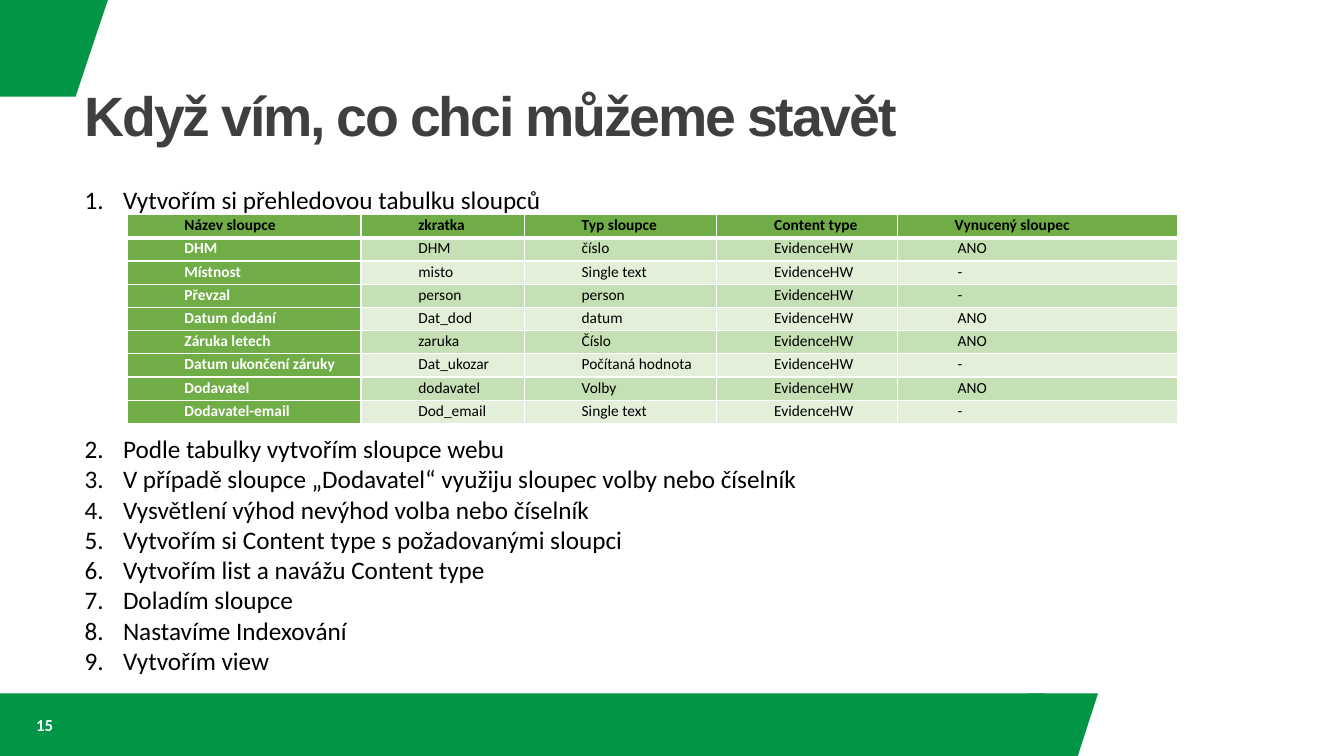
from pptx import Presentation
from pptx.dml.color import RGBColor
from pptx.enum.shapes import MSO_SHAPE
from pptx.enum.text import MSO_ANCHOR, MSO_AUTO_SIZE, PP_ALIGN
from pptx.oxml.xmlchemy import OxmlElement
from pptx.util import Inches, Pt

GREEN, WHITE, BLACK = "009645", "FFFFFF", "000000"
HEAD, BANDS = "70AD47", ("C5E0B4", "E2F0D9")
COLS = (2.32, 1.62, 1.91, 1.79, 2.78)
ROW = 0.23
ROWS = (
    ("Název sloupce", "zkratka", "Typ sloupce", "Content type", "Vynucený sloupec"),
    ("DHM", "DHM", "číslo", "EvidenceHW", "ANO"),
    ("Místnost", "misto", "Single text", "EvidenceHW", "-"),
    ("Převzal", "person", "person", "EvidenceHW", "-"),
    ("Datum dodání", "Dat_dod", "datum", "EvidenceHW", "ANO"),
    ("Záruka letech", "zaruka", "Číslo", "EvidenceHW", "ANO"),
    ("Datum ukončení záruky", "Dat_ukozar", "Počítaná hodnota", "EvidenceHW", "-"),
    ("Dodavatel", "dodavatel", "Volby", "EvidenceHW", "ANO"),
    ("Dodavatel-email", "Dod_email", "Single text", "EvidenceHW", "-"),
)
STEPS = (
    "Vytvořím si přehledovou tabulku sloupců",
    "Podle tabulky vytvořím sloupce webu",
    "V případě sloupce „Dodavatel“ využiju sloupec volby nebo číselník",
    "Vysvětlení výhod nevýhod volba nebo číselník",
    "Vytvořím si Content type s požadovanými sloupci",
    "Vytvořím list a navážu Content type",
    "Doladím sloupce",
    "Nastavíme Indexování",
    "Vytvořím view",
)


def color(code):
    return RGBColor.from_string(code)


def apply(item, values):
    for name, value in values.items():
        setattr(item, name, value)


def place(shape, left, top, width, height):
    apply(shape, {"left": Inches(left), "top": Inches(top),
                  "width": Inches(width), "height": Inches(height)})


def write(para, text, size, code, bold=False, face="Calibri"):
    run = para.add_run()
    run.text = text
    apply(run.font, {"size": Pt(size), "bold": bold, "name": face})
    run.font.color.rgb = color(code)
    return run


def paint(shape, code):
    shape.shadow.inherit = False
    shape.fill.solid()
    shape.fill.fore_color.rgb = color(code)
    shape.line.fill.background()


def add_slant(slide, points):
    first, *rest = [(Inches(x), Inches(y)) for x, y in points]
    form = slide.shapes.build_freeform(*first)
    form.add_line_segments(rest, close=True)
    paint(form.convert_to_shape(), GREEN)


def add_bar(slide, *box):
    paint(slide.shapes.add_shape(MSO_SHAPE.RECTANGLE, *map(Inches, box)), GREEN)


def add_number(slide, text, *box):
    frame = slide.shapes.add_textbox(*map(Inches, box)).text_frame
    apply(frame, {"word_wrap": True, "vertical_anchor": MSO_ANCHOR.MIDDLE})
    write(frame.paragraphs[0], text, 12, WHITE, True)


def set_title(title, text, *box):
    place(title, *box)
    frame = title.text_frame
    apply(frame, {"vertical_anchor": MSO_ANCHOR.MIDDLE,
                  "auto_size": MSO_AUTO_SIZE.NONE})
    para = frame.paragraphs[0]
    apply(para, {"alignment": PP_ALIGN.LEFT, "line_spacing": 0.9})
    run = write(para, text, 39.6, "3F3F3F", True, "Arial")
    run.font._element.set("spc", "-160")


def indent(para, left, first=0):
    props = para._p.get_or_add_pPr()
    props.set("marL", str(Inches(left)))
    props.set("indent", str(Inches(first)))
    return props


def fill_list(body, steps, start, *box):
    """Fill a body placeholder with steps numbered from start."""
    place(body, *box)
    frame = body.text_frame
    apply(frame, {"word_wrap": False, "auto_size": MSO_AUTO_SIZE.NONE,
                  "vertical_anchor": MSO_ANCHOR.TOP})
    for i, step in enumerate(steps):
        para = frame.add_paragraph() if i else frame.paragraphs[0]
        auto = OxmlElement("a:buAutoNum")
        auto.set("type", "arabicPeriod")
        auto.set("startAt", str(start))
        indent(para, 0.38, -0.38).append(auto)
        apply(para, {"space_before": Pt(0), "alignment": PP_ALIGN.LEFT})
        write(para, step, 18, BLACK)


def add_edge(cell, side, width):
    edge = OxmlElement(f"a:ln{side}")
    edge.set("w", str(Pt(width)))
    solid, tint = OxmlElement("a:solidFill"), OxmlElement("a:srgbClr")
    tint.set("val", WHITE)
    solid.append(tint)
    edge.append(solid)
    cell._tc.get_or_add_tcPr().append(edge)


def set_cell(cell, text, row, col):
    thick = {"T": row == 1, "B": row == 0}
    for side in "LRTB":
        add_edge(cell, side, 3 if thick.get(side) else 1)
    cell.fill.solid()
    head = row == 0 or col == 0
    cell.fill.fore_color.rgb = color(HEAD if head else BANDS[(row - 1) % 2])
    apply(cell, {"margin_left": Inches(0.07), "margin_right": Inches(0.07),
                 "margin_top": 0, "margin_bottom": 0})
    para = cell.text_frame.paragraphs[0]
    indent(para, 0.53 if row and col == len(COLS) - 1 else 0.5)
    para.line_spacing = 1.07
    write(para, text, 11, WHITE if row and col == 0 else BLACK, head)


def add_grid(slide, left, top):
    box = map(Inches, (left, top, sum(COLS), ROW * len(ROWS)))
    table = slide.shapes.add_table(len(ROWS), len(COLS), *box).table
    for column, width in zip(table.columns, COLS):
        column.width = Inches(width)
    for r, texts in enumerate(ROWS):
        table.rows[r].height = Inches(ROW)
        for c, text in enumerate(texts):
            set_cell(table.cell(r, c), text, r, c)


def main():
    deck = Presentation()
    apply(deck, {"slide_width": Inches(13.33), "slide_height": Inches(7.5)})
    slide = deck.slides.add_slide(deck.slide_layouts[3])
    title, intro, rest = slide.placeholders
    add_slant(slide, [(0, 0), (1.07, 0), (0.75, 0.96), (0, 0.96)])
    add_slant(slide, [(10.2, 6.88), (10.89, 6.88), (10.69, 7.5), (10.2, 7.5)])
    add_bar(slide, 0, 6.88, 10.36, 0.62)
    add_number(slide, "15", 0.26, 6.99, 3, 0.4)
    set_title(title, "Když vím, co chci můžeme stavět", 0.74, 0.82, 11.79, 0.71)
    add_grid(slide, 1.26, 2.13)
    fill_list(intro, STEPS[:1], 1, 0.74, 1.78, 5.1, 0.71)
    fill_list(rest, STEPS[1:], 2, 0.74, 4.25, 7.34, 2.52)
    deck.save("out.pptx")


if __name__ == "__main__":
    main()
